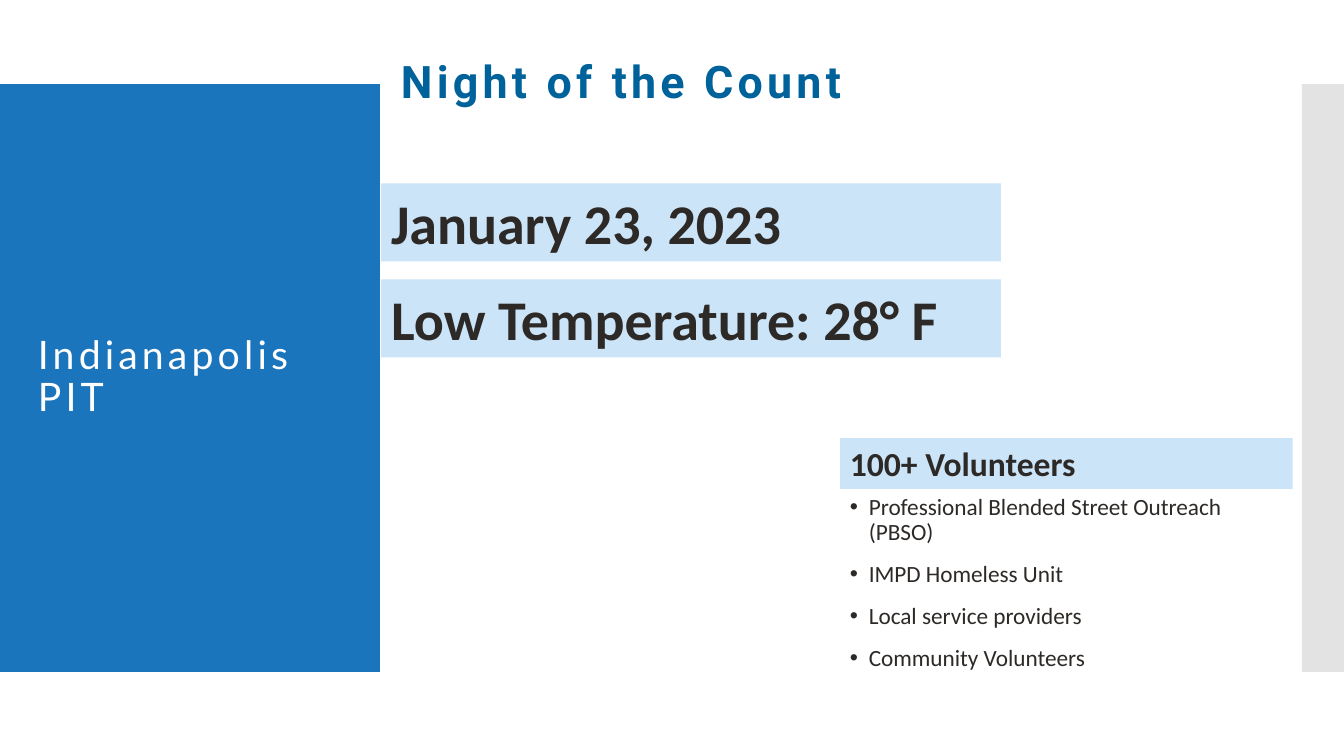
from lxml.etree import SubElement
from pptx import Presentation
from pptx.dml.color import RGBColor
from pptx.enum.shapes import MSO_SHAPE as Shape
from pptx.enum.text import MSO_ANCHOR as Anchor, MSO_AUTO_SIZE as AutoSize, PP_ALIGN as Align
from pptx.oxml.ns import qn
from pptx.util import Pt

BLUE = RGBColor(0x1B, 0x75, 0xBC)
DEEP_BLUE = RGBColor(0x00, 0x62, 0x9B)
PALE_BLUE = RGBColor(0xCB, 0xE4, 0xF8)
GREY = RGBColor(0xC8, 0xC8, 0xC8)
INK = RGBColor(0x2D, 0x29, 0x26)
WHITE = RGBColor(0xFF, 0xFF, 0xFF)

TITLE_ONLY = 5
BANNER_LEFT, BANNER_WIDTH = 272.2, 442.8
BANNER_TOP, BANNER_HEIGHT, BANNER_STEP = 131, 55.7, 68.6
VOLUNTEERS_LEFT, VOLUNTEERS_WIDTH = 600, 323.3
VOLUNTEER_GROUPS = [
    "Professional Blended Street Outreach (PBSO)",
    "IMPD Homeless Unit",
    "Local service providers",
    "Community Volunteers",
]


class CountSlide:
    heading_font = {"name": "Roboto", "size": Pt(32), "bold": True}
    city_font = {"name": "Lato", "size": Pt(28), "bold": False}
    banner_font = {"name": "Calibri", "bold": True}
    list_font = {"name": "Calibri", "size": Pt(16.6), "bold": False}

    def __init__(self, deck):
        self.slide = deck.slides.add_slide(deck.slide_layouts[TITLE_ONLY])

    def fill_frame(self, frame, lines, font, color, anchor=Anchor.TOP,
                   spacing=0, bullets=False, **paragraph_format):
        """Fill a text frame; spacing is the gap between letters in points."""
        frame_format = {"word_wrap": True, "auto_size": AutoSize.NONE,
                        "vertical_anchor": anchor}
        for key, value in frame_format.items():
            setattr(frame, key, value)
        for index, line in enumerate(lines):
            paragraph = frame.add_paragraph() if index else frame.paragraphs[0]
            for key, value in {"alignment": Align.LEFT, **paragraph_format}.items():
                setattr(paragraph, key, value)
            if bullets:
                self.add_bullet(paragraph)
            run = paragraph.add_run()
            run.text = line
            for key, value in font.items():
                setattr(run.font, key, value)
            run.font.color.rgb = color
            if spacing:
                run.font._element.set("spc", str(spacing * 100))

    def add_bullet(self, paragraph):
        properties = paragraph._p.get_or_add_pPr()
        properties.set("marL", str(Pt(13.5)))
        properties.set("indent", str(Pt(-13.5)))
        SubElement(properties, qn("a:buFont"), typeface="Arial")
        SubElement(properties, qn("a:buChar"), char="•")

    def title(self, box, text):
        heading = self.slide.shapes.title
        for key, value in zip(("left", "top", "width", "height"), box):
            setattr(heading, key, Pt(value))
        self.fill_frame(heading.text_frame, [text], self.heading_font, DEEP_BLUE,
                        Anchor.MIDDLE, spacing=3, line_spacing=0.9)

    def panel(self, box, color, opacity=100):
        block = self.slide.shapes.add_shape(Shape.RECTANGLE, *map(Pt, box))
        block.shadow.inherit = False
        block.fill.solid()
        block.fill.fore_color.rgb = color
        block.line.fill.background()
        if opacity < 100:
            tint = block._element.spPr.find(".//" + qn("a:srgbClr"))
            SubElement(tint, qn("a:alpha"), val=str(opacity * 1000))
        return block

    def banner(self, box, text, size):
        frame = self.panel(box, PALE_BLUE).text_frame
        self.fill_frame(frame, [text], {**self.banner_font, "size": Pt(size)}, INK,
                        space_after=Pt(12))
        frame.auto_size = AutoSize.SHAPE_TO_FIT_TEXT

    def text(self, box, lines, font, color, **layout):
        frame = self.slide.shapes.add_textbox(*map(Pt, box)).text_frame
        self.fill_frame(frame, lines, font, color, line_spacing=0.9, **layout)


def main():
    deck = Presentation()
    deck.slide_width, deck.slide_height = Pt(960), Pt(540)
    count = CountSlide(deck)

    count.panel((0, 60, 271.4, 420), BLUE)
    count.panel((930, 60, 30, 420), GREY, opacity=50)
    count.title((279.2, 32.2, 620.6, 55.4), "Night of the Count")

    for row, fact in enumerate(["January 23, 2023", "Low Temperature: 28° F"]):
        top = BANNER_TOP + row * BANNER_STEP
        count.banner((BANNER_LEFT, top, BANNER_WIDTH, BANNER_HEIGHT), fact, 40)

    count.banner((VOLUNTEERS_LEFT, 313, VOLUNTEERS_WIDTH, 36.3), "100+ Volunteers", 24)
    count.text((VOLUNTEERS_LEFT, 350.6, VOLUNTEERS_WIDTH, 147.6), VOLUNTEER_GROUPS,
               count.list_font, INK, bullets=True, space_after=Pt(12))
    count.text((20, 88.6, 232, 362), ["Indianapolis", "PIT"],
               count.city_font, WHITE, anchor=Anchor.MIDDLE, spacing=3)

    deck.save("out.pptx")


if __name__ == "__main__":
    main()
